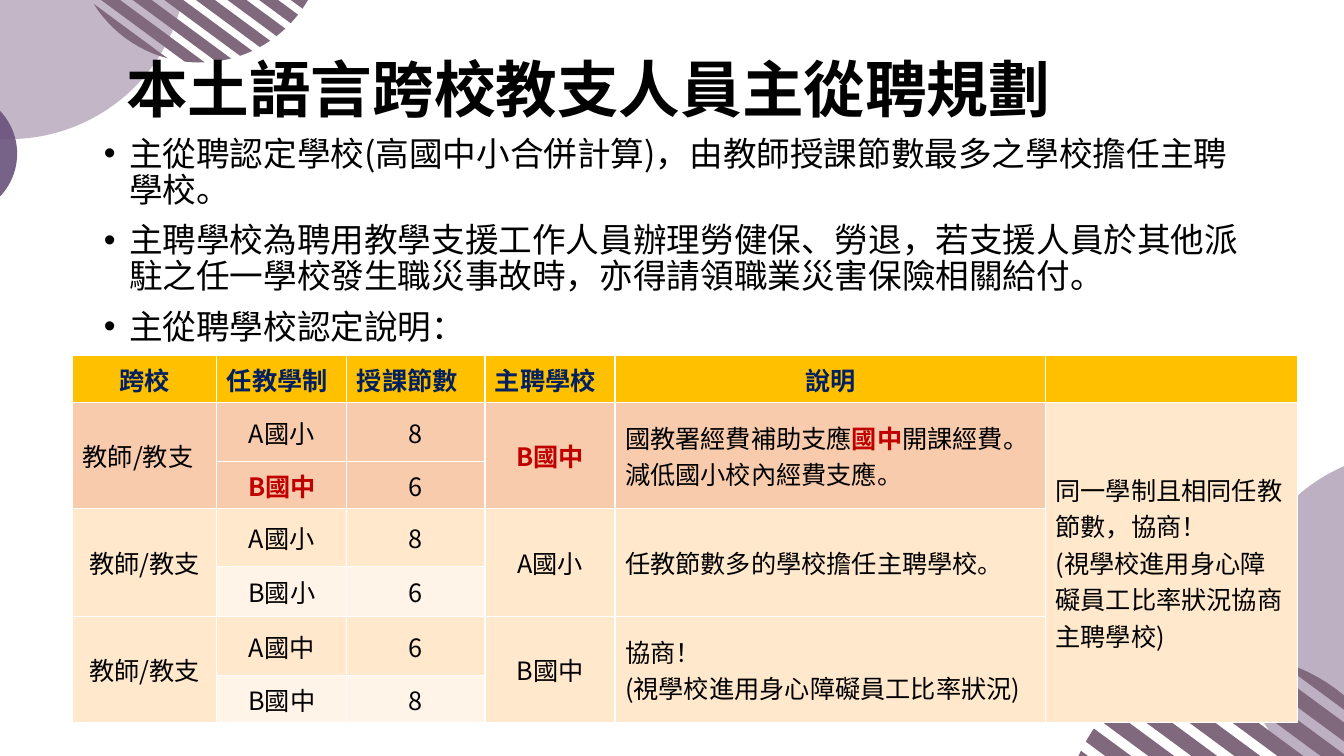
import math
from lxml import etree
from pptx import Presentation
from pptx.dml.color import RGBColor
from pptx.enum import shapes, text
from pptx.oxml.ns import qn
from pptx.util import Inches, Pt

FONT = "Noto Sans CJK SC"
BLACK = RGBColor(0, 0, 0)
NAVY = RGBColor(0x00, 0x20, 0x60)
RED = RGBColor(0xC0, 0x00, 0x00)
GOLD = RGBColor(0xFF, 0xC0, 0x00)
PEACH = RGBColor(0xF8, 0xCB, 0xAD)
CREAM = RGBColor(0xFF, 0xE8, 0xCC)
PALE = RGBColor(0xFF, 0xF4, 0xE7)
LILAC = RGBColor(0xBD, 0xB0, 0xC2)
MAUVE = RGBColor(0x80, 0x69, 0x7D)
PLUM = RGBColor(0x69, 0x52, 0x7C)


def style(run, size, color=BLACK, bold=False):
    font = run.font
    font.name, font.size, font.bold = FONT, Pt(size), bold
    font.color.rgb = color
    etree.SubElement(run._r.get_or_add_rPr(), qn("a:ea")).set("typeface", FONT)


def paint(shape, color, alpha=100):
    """Fill a shape, without line or shadow; alpha is in percent."""
    shape.shadow.inherit = False
    shape.line.fill.background()
    shape.fill.solid()
    shape.fill.fore_color.rgb = color
    if alpha < 100:
        tint = shape.fill._xPr.find(".//" + qn("a:srgbClr"))
        etree.SubElement(tint, qn("a:alpha")).set("val", str(alpha * 1000))


prs = Presentation()
prs.slide_width, prs.slide_height = Inches(13.33), Inches(7.5)
slide = prs.slides.add_slide(prs.slide_layouts[1])
tree = slide.shapes
title, body = slide.placeholders

# Corner ornaments: big disc, striped disc, small disc
TILT = math.radians(36.4)
STRIPES, PITCH, HALF = 14, 0.15, 0.045
corners = [
    ((12.27, 4.48, 3.52, 100), (12.24, 8.19, 1.69), (10.96, 6.24, 0.86)),
    ((-1.67, -2.14, 3.52, 90), (1.98, -0.62, 1.24), (-1.06, 0.91, 1.23)),
]
for big, (cx, cy, rad), small in corners:
    x, y, d, alpha = big
    disc = tree.add_shape(shapes.MSO_SHAPE.OVAL, *map(Inches, (x, y, d, d)))
    paint(disc, LILAC, alpha)

    pen = None
    for i in range(STRIPES):
        mid = (i - (STRIPES - 1) / 2) * PITCH
        low = math.asin(max(mid - HALF, -1))
        high = math.asin(min(mid + HALF, 1))
        arc = [low + (high - low) * k / 6 for k in range(7)]
        turns = arc + [math.pi - a for a in reversed(arc)]
        pts = [(Inches(cx + rad * math.cos(a + TILT)),
                Inches(cy + rad * math.sin(a + TILT))) for a in turns]
        if pen is None:
            pen = tree.build_freeform(*pts[0])
        else:
            pen.move_to(*pts[0])
        pen.add_line_segments(pts[1:], close=True)
    paint(pen.convert_to_shape(), MAUVE)

    x, y, d = small
    dot = tree.add_shape(shapes.MSO_SHAPE.OVAL, *map(Inches, (x, y, d, d)))
    paint(dot, PLUM, 90)

# Title and bullets, placed in front of the ornaments
title.left, title.top, title.width, title.height = map(
    Inches, (1.15, 0.19, 11.5, 1.45))
body.left, body.top, body.width, body.height = map(
    Inches, (0.93, 1.31, 11.5, 4.76))
title.text_frame.text = "本土語言跨校教支人員主從聘規劃"
body.text_frame.text = "\n".join([
    "主從聘認定學校(高國中小合併計算)，由教師授課節數最多之學校擔任主聘學校。",
    "主聘學校為聘用教學支援工作人員辦理勞健保、勞退，若支援人員於其他派駐之任一學校發生職災事故時，亦得請領職業災害保險相關給付。",
    "主從聘學校認定說明：",
])
for holder, anchor, size in [(title, text.MSO_ANCHOR.MIDDLE, 44),
                             (body, text.MSO_ANCHOR.TOP, 24)]:
    tree._spTree.append(holder._element)
    frame = holder.text_frame
    frame.auto_size = text.MSO_AUTO_SIZE.NONE
    frame.vertical_anchor = anchor
    for para in frame.paragraphs:
        para.alignment = text.PP_ALIGN.LEFT
        para.line_spacing = 0.9
        style(para.runs[0], size, bold=holder is title)
for para in body.text_frame.paragraphs:
    para.space_before = Pt(10)
    props = para._p.get_or_add_pPr()
    props.set("marL", str(Inches(0.25)))
    props.set("indent", str(-Inches(0.25)))

# Table: None continues the cell above; * marks red bold text
rows = [
    ["跨校", "任教學制", "授課節數", "主聘學校", "說明", ""],
    ["教師/教支", "A國小", "8", "*B國中*",
     "國教署經費補助支應*國中*開課經費。\n減低國小校內經費支應。",
     "同一學制且相同任教節數，協商！\n(視學校進用身心障礙員工比率狀況協商主聘學校)"],
    [None, "*B國中*", "6", None, None, None],
    ["教師/教支", "A國小", "8", "A國小", "任教節數多的學校擔任主聘學校。", None],
    [None, "B國小", "6", None, None, None],
    ["教師/教支", "A國中", "6", "B國中",
     "協商！\n(視學校進用身心障礙員工比率狀況)", None],
    [None, "B國中", "8", None, None, None],
]
fills = [GOLD, PEACH, PEACH, CREAM, PALE, CREAM, PALE]
lefts = {(0, 1), (0, 2), (0, 3), (1, 0)}
table = tree.add_table(7, 6, *map(Inches, (0.72, 3.53, 12.16, 3.5))).table
table.horz_banding = False
for col, width in zip(table.columns, [1.43, 1.29, 1.37, 1.29, 4.27, 2.5]):
    col.width = Inches(width)
for row, height in zip(table.rows, [0.41, 0.59, 0.44, 0.58, 0.49, 0.59, 0.41]):
    row.height = Inches(height)
for r in (1, 3, 5):
    for c in (0, 3, 4):
        table.cell(r, c).merge(table.cell(r + 1, c))
table.cell(1, 5).merge(table.cell(6, 5))

for r, row in enumerate(rows):
    for c, words in enumerate(row):
        cell = table.cell(r, c)
        cell.fill.solid()
        cell.fill.fore_color.rgb = CREAM if c == 5 and r else fills[r]
        if not words:
            continue
        cell.vertical_anchor = text.MSO_ANCHOR.MIDDLE
        cell.text = words.replace("*", "")
        left = (r, c) in lefts or (r and c > 3)
        for para, line in zip(cell.text_frame.paragraphs, words.split("\n")):
            para.alignment = text.PP_ALIGN.LEFT if left else text.PP_ALIGN.CENTER
            para.clear()
            for k, part in enumerate(line.split("*")):
                if part:
                    run = para.add_run()
                    run.text = part
                    color = RED if k % 2 else BLACK if r else NAVY
                    style(run, 18, color, color != BLACK)

prs.save("out.pptx")
